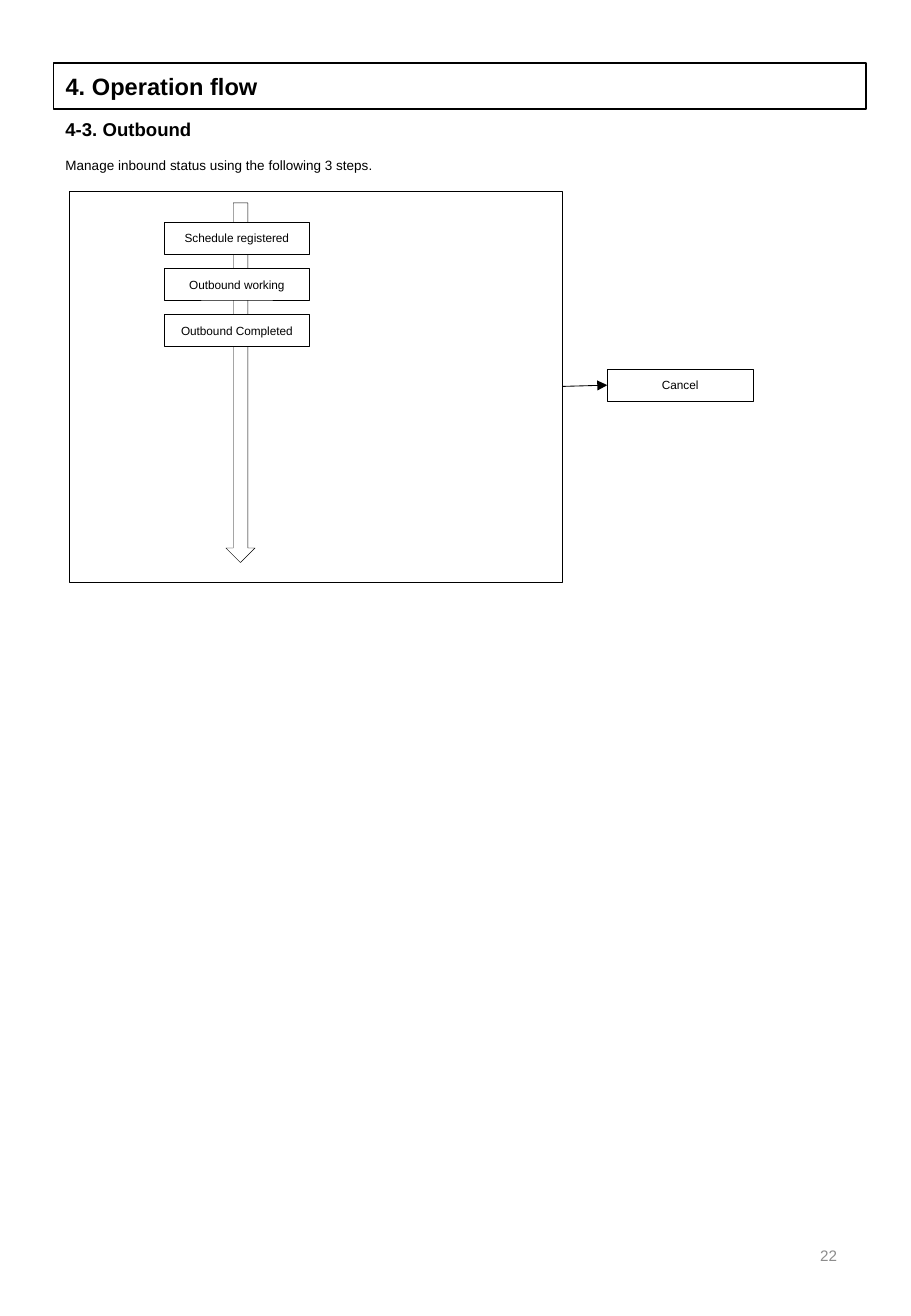
from pptx import Presentation
from pptx.dml.color import RGBColor
from pptx.enum.shapes import MSO_CONNECTOR as CONN, MSO_SHAPE as SHAPE
from pptx.enum.text import MSO_ANCHOR as ANCHOR, MSO_AUTO_SIZE as AUTO, PP_ALIGN as ALIGN
from pptx.util import Inches, Pt
from lxml import etree

COLORS = {"ink": "000000", "paper": "FFFFFF", "page_no": "8C8C8C"}
FONT = "Arial"
A_NS = "{http://schemas.openxmlformats.org/drawingml/2006/main}"


def rgb(name):
    return RGBColor.from_string(COLORS[name])


class FlowSlide:
    """Holds the style and the current slide."""

    def __init__(self, prs):
        self.slide = prs.slides.add_slide(prs.slide_layouts[5])
        self.shapes = self.slide.shapes

    def set_text(self, sp, text, size, bold=False, color="ink",
                 align=ALIGN.LEFT, anchor=ANCHOR.TOP):
        tf = sp.text_frame
        tf.text = text
        tf.word_wrap = True
        tf.auto_size = AUTO.NONE
        tf.vertical_anchor = anchor
        p = tf.paragraphs[0]
        p.alignment = align
        r = p.runs[0]
        r.font.name, r.font.size, r.font.bold = FONT, Pt(size), bold
        r.font.color.rgb = rgb(color)

    def outline(self, sp, width):
        sp.line.color.rgb = rgb("ink")
        sp.line.width = Pt(width)

    def title(self, text, left, top, width, height):
        sp = self.shapes.title
        sp.left, sp.top = Inches(left), Inches(top)
        sp.width, sp.height = Inches(width), Inches(height)
        self.outline(sp, 1)
        self.set_text(sp, text, 14, bold=True, anchor=ANCHOR.MIDDLE)

    def text(self, text, left, top, width, height, size, **style):
        sp = self.shapes.add_textbox(Inches(left), Inches(top), Inches(width), Inches(height))
        self.set_text(sp, text, size, **style)

    def shape(self, kind, left, top, width, height):
        sp = self.shapes.add_shape(kind, Inches(left), Inches(top), Inches(width), Inches(height))
        sp.shadow.inherit = False
        sp.fill.solid()
        sp.fill.fore_color.rgb = rgb("paper")
        self.outline(sp, 0.25)
        return sp

    def status(self, text, left, top):
        sp = self.shape(SHAPE.RECTANGLE, left, top, 1.2, 0.26)
        self.set_text(sp, text, 7, align=ALIGN.CENTER, anchor=ANCHOR.MIDDLE)
        return sp

    def arrow(self, source, target):
        """Link the right side of source to the left side of target."""
        line = self.shapes.add_connector(CONN.STRAIGHT, 0, 0, 0, 0)
        line.begin_connect(source, 3)
        line.end_connect(target, 1)
        self.outline(line, 0.5)
        props = line.element.spPr
        etree.SubElement(props.find(A_NS + "ln"), A_NS + "tailEnd", type="triangle")
        etree.SubElement(props, A_NS + "effectLst")


def main():
    prs = Presentation()
    prs.slide_width, prs.slide_height = Inches(7.5), Inches(10.83)
    s = FlowSlide(prs)

    # Headings
    left, width = 0.44, 6.69
    s.title("4. Operation flow", left, 0.52, width, 0.38)
    s.text("4-3. Outbound", left, 0.92, width, 0.29, 11, bold=True)
    s.text("Manage inbound status using the following 3 steps.", left, 1.24, width, 0.24, 8)

    # Flow frame with its downward arrow
    frame = s.shape(SHAPE.RECTANGLE, 0.57, 1.57, 4.06, 3.22)
    flow = s.shape(SHAPE.RIGHT_ARROW, 0.5, 3.03, 2.96, 0.24)
    flow.rotation = 90

    # Status steps
    steps = ["Schedule registered", "Outbound working", "Outbound Completed"]
    for i, step in enumerate(steps):
        s.status(step, 1.35, 1.83 + i * 0.38)

    # Cancel branch
    cancel = s.status("Cancel", 5, 3.04)
    s.arrow(frame, cancel)

    # Page number
    s.text("22", 5.3, 10.04, 1.69, 0.58, 9, color="page_no",
           align=ALIGN.RIGHT, anchor=ANCHOR.MIDDLE)

    prs.save("out.pptx")


if __name__ == "__main__":
    main()
